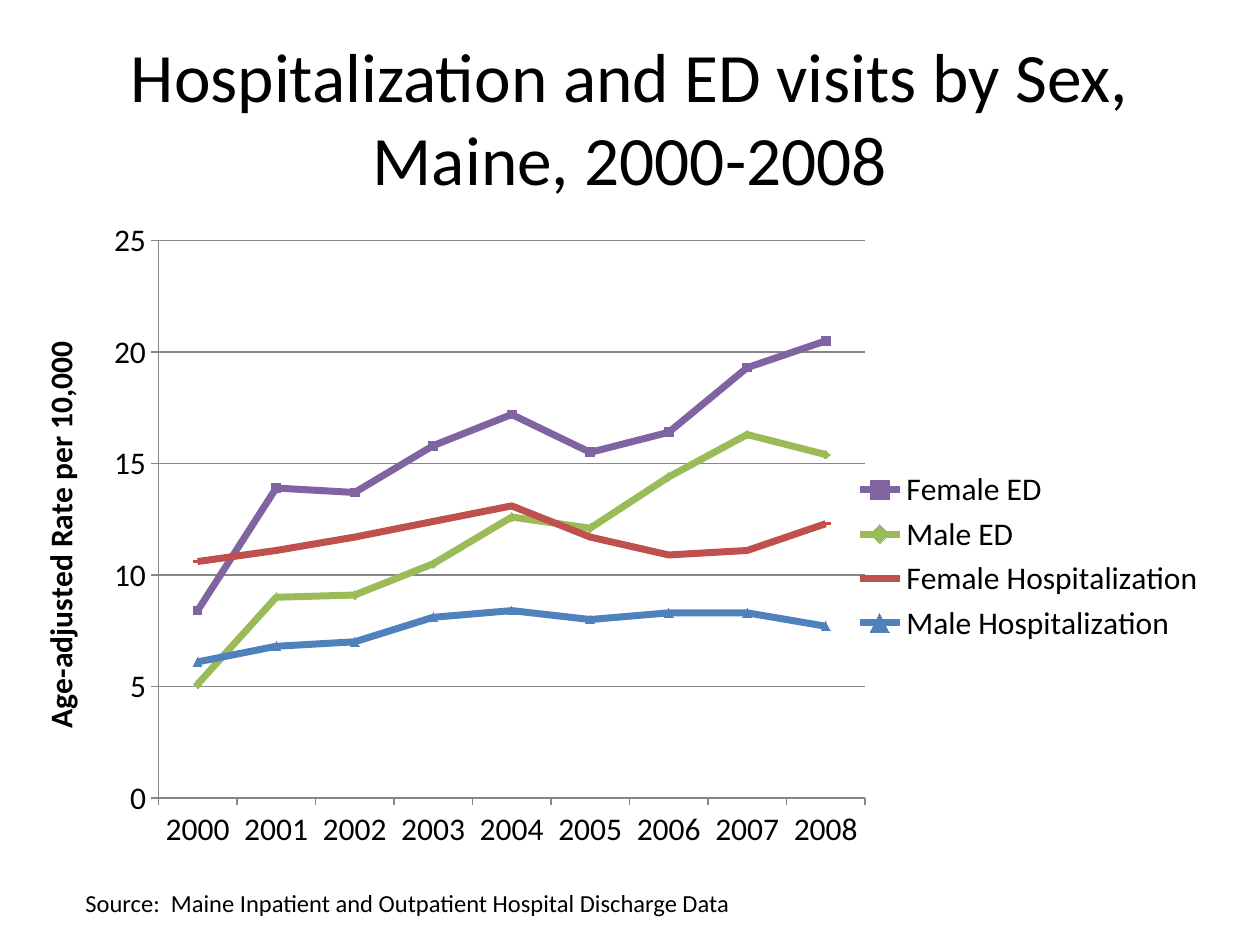
from lxml.etree import SubElement
from pptx import Presentation
from pptx.chart.data import CategoryChartData
from pptx.dml.color import RGBColor
from pptx.enum.chart import (XL_CHART_TYPE, XL_LEGEND_POSITION,
                             XL_MARKER_STYLE, XL_TICK_MARK)
from pptx.enum.text import MSO_ANCHOR, PP_ALIGN
from pptx.oxml.ns import qn
from pptx.util import Pt

PX = 9144  # 100 px to the inch
FONT = "Calibri"
BLACK = RGBColor(0x00, 0x00, 0x00)
GRAY = RGBColor(0x86, 0x86, 0x86)
PURPLE = RGBColor(0x80, 0x64, 0xA2)
GREEN = RGBColor(0x9B, 0xBB, 0x59)
RED = RGBColor(0xC0, 0x50, 0x4D)
BLUE = RGBColor(0x4F, 0x81, 0xBD)

YEARS = [str(year) for year in range(2000, 2009)]
SERIES = [
    ("Female ED", PURPLE, XL_MARKER_STYLE.SQUARE,
     (8.4, 13.9, 13.7, 15.8, 17.2, 15.5, 16.4, 19.3, 20.5)),
    ("Male ED", GREEN, XL_MARKER_STYLE.DIAMOND,
     (5.1, 9, 9.1, 10.5, 12.6, 12.1, 14.4, 16.3, 15.4)),
    ("Female Hospitalization", RED, XL_MARKER_STYLE.DASH,
     (10.6, 11.1, 11.7, 12.4, 13.1, 11.7, 10.9, 11.1, 12.3)),
    ("Male Hospitalization", BLUE, XL_MARKER_STYLE.TRIANGLE,
     (6.1, 6.8, 7, 8.1, 8.4, 8, 8.3, 8.3, 7.7)),
]
PLOT = {"x": 0.13, "y": 0.03, "w": 0.58, "h": 0.83}


def emu(box):
    return [length * PX for length in box]


def style_font(font, size, bold=False):
    font.name = FONT
    font.size = Pt(size)
    font.bold = bold
    font.color.rgb = BLACK


def add_title(s, box, text):
    title = s.shapes.title
    title.left, title.top, title.width, title.height = emu(box)
    tf = title.text_frame
    tf.text = text
    tf.word_wrap = True
    tf.vertical_anchor = MSO_ANCHOR.MIDDLE
    p = tf.paragraphs[0]
    p.alignment = PP_ALIGN.CENTER
    style_font(p.font, 39.6)


def set_plot_layout(chart):
    """Fix the inner plot area, as fractions of the chart."""
    plot_area = chart._chartSpace.find(".//" + qn("c:plotArea"))
    for old in plot_area.findall(qn("c:layout")):
        plot_area.remove(old)
    layout = SubElement(plot_area, qn("c:layout"))
    plot_area.insert(0, layout)
    manual = SubElement(layout, qn("c:manualLayout"))
    values = {"layoutTarget": "inner", "xMode": "edge", "yMode": "edge", **PLOT}
    for tag, value in values.items():
        SubElement(manual, qn("c:" + tag)).set("val", str(value))


def add_rate_chart(s, box):
    data = CategoryChartData()
    data.categories = YEARS
    for name, _, _, values in SERIES:
        data.add_series(name, values)
    chart = s.shapes.add_chart(XL_CHART_TYPE.LINE_MARKERS, *emu(box), data).chart
    chart.has_title = False
    style_font(chart.font, 18)
    set_plot_layout(chart)

    # Lines and markers
    chart.plots[0].vary_by_categories = False
    for series, (_, color, marker, _) in zip(chart.plots[0].series, SERIES):
        series.smooth = False
        series.format.line.color.rgb = color
        series.format.line.width = Pt(4)
        series.marker.style = marker
        series.marker.size = 5
        for part in (series.marker.format.fill, series.marker.format.line.fill):
            part.solid()
            part.fore_color.rgb = color

    # Axes
    value_axis = chart.value_axis
    for axis in (chart.category_axis, value_axis):
        axis.major_tick_mark = XL_TICK_MARK.OUTSIDE
        axis.minor_tick_mark = XL_TICK_MARK.NONE
        axis.format.line.color.rgb = GRAY
        style_font(axis.tick_labels.font, 18)
    value_axis.minimum_scale, value_axis.maximum_scale = 0, 25
    value_axis.major_unit = 5
    value_axis.has_major_gridlines = True
    value_axis.major_gridlines.format.line.color.rgb = GRAY
    tf = value_axis.axis_title.text_frame
    tf.text = "Age-adjusted Rate per 10,000"
    style_font(tf.paragraphs[0].font, 18, bold=True)

    # Legend
    chart.has_legend = True
    chart.legend.position = XL_LEGEND_POSITION.RIGHT
    chart.legend.include_in_layout = False
    style_font(chart.legend.font, 18)


def add_source(s, box, text):
    tf = s.shapes.add_textbox(*emu(box)).text_frame
    tf.word_wrap = True
    tf.text = text
    style_font(tf.paragraphs[0].font, 14)


def main():
    prs = Presentation()
    prs.slide_width, prs.slide_height = emu((1000, 750))
    s = prs.slides.add_slide(prs.slide_layouts[5])
    add_title(s, (50, 30, 900, 125),
              "Hospitalization and ED visits by Sex, Maine, 2000-2008")
    add_rate_chart(s, (0, 175, 967, 533))
    add_source(s, (58, 700, 583, 34),
               "Source:  Maine Inpatient and Outpatient Hospital Discharge Data")
    prs.save("out.pptx")


if __name__ == "__main__":
    main()
